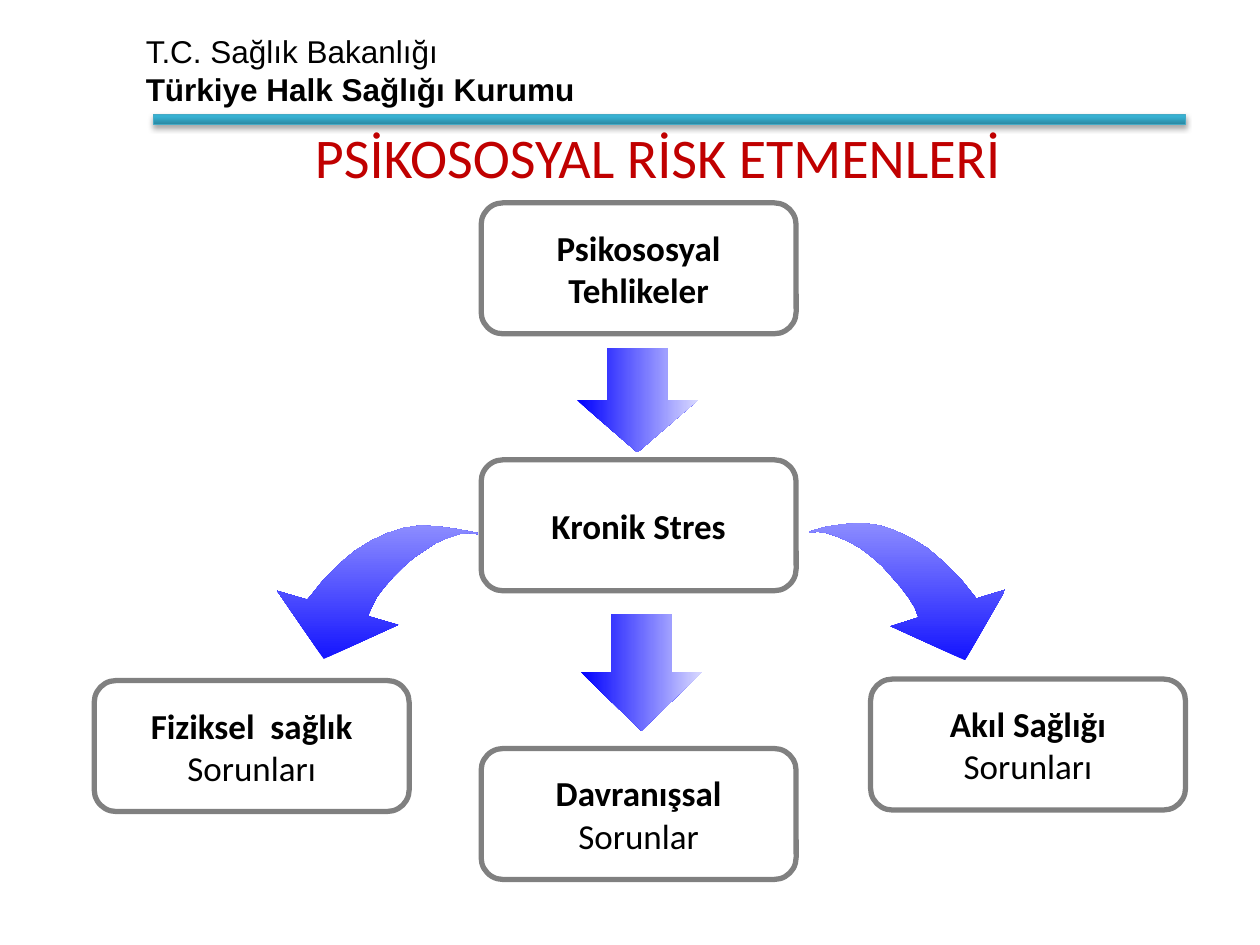
from lxml.etree import SubElement
from pptx import Presentation
from pptx.dml.color import RGBColor
from pptx.enum.shapes import MSO_SHAPE
from pptx.enum.text import MSO_ANCHOR, PP_ALIGN
from pptx.oxml.ns import qn
from pptx.util import Cm, Pt

COLORS = {
    "text": "000000", "title": "C00000", "border": "808080",
    "bar_dark": "2A88A2", "bar_light": "37B1D2", "bar_line": "46AAC5",
    "blue": "0000FF", "pale": "D8D8FF",
    "curve_dark": "1414FF", "curve_light": "8C8CFF",
}
HUNDREDTH_INCH = Cm(2.54) / 100
BOX_WIDTH, BOX_HEIGHT = 6.35, 2.64


def color(name):
    return RGBColor.from_string(COLORS[name])


class RiskSlide:
    """Holds the style and the current slide."""

    def __init__(self, slide, font="Calibri", box_size=20):
        self.shapes = slide.shapes
        self.font = font
        self.box_size = box_size

    def fill_text(self, frame, lines, size, font, ink="text", bold_lines=(),
                  align=PP_ALIGN.LEFT):
        frame.text = "\n".join(lines)
        for index, paragraph in enumerate(frame.paragraphs):
            paragraph.alignment = align
            for run in paragraph.runs:
                run.font.size = Pt(size)
                run.font.name = font
                run.font.bold = index in bold_lines
                run.font.color.rgb = color(ink)

    def text(self, place, lines, size, font=None, wrap=True, **style):
        frame = self.shapes.add_textbox(*map(Cm, place)).text_frame
        frame.word_wrap = wrap
        self.fill_text(frame, lines, size, font or self.font, **style)

    def gradient(self, shape, start, end, angle, end_position=1.0):
        shape.shadow.inherit = False
        shape.fill.gradient()
        shape.fill.gradient_angle = angle
        first, last = shape.fill.gradient_stops
        first.color.rgb, last.color.rgb = color(start), color(end)
        first.position, last.position = 0, end_position

    def bar(self, place):
        shape = self.shapes.add_shape(MSO_SHAPE.RECTANGLE, *map(Cm, place))
        self.gradient(shape, "bar_dark", "bar_light", 90, 0.8)
        shape.line.color.rgb = color("bar_line")
        shape.line.width = Pt(0.75)
        # Soft shadow straight below the bar
        effects = shape._element.spPr.find(qn("a:effectLst"))
        shadow = SubElement(effects, qn("a:outerShdw"), blurRad=str(Pt(3.1)),
                            dist=str(Pt(1.8)), dir="5400000", rotWithShape="0")
        shade = SubElement(shadow, qn("a:srgbClr"), val=COLORS["text"])
        SubElement(shade, qn("a:alpha"), val="35000")

    def box(self, left, top, lines, bold_lines=(0,)):
        shape = self.shapes.add_shape(MSO_SHAPE.ROUNDED_RECTANGLE, Cm(left), Cm(top),
                                      Cm(BOX_WIDTH), Cm(BOX_HEIGHT))
        shape.shadow.inherit = False
        shape.fill.background()
        shape.line.color.rgb = color("border")
        shape.line.width = Pt(3)
        frame = shape.text_frame
        frame.word_wrap = False
        frame.vertical_anchor = MSO_ANCHOR.MIDDLE
        self.fill_text(frame, lines, self.box_size, self.font,
                       bold_lines=bold_lines, align=PP_ALIGN.CENTER)

    def down_arrow(self, place):
        shape = self.shapes.add_shape(MSO_SHAPE.DOWN_ARROW, *map(Cm, place))
        self.gradient(shape, "blue", "pale", 0)
        shape.line.fill.background()

    def curved_arrow(self, points):
        builder = self.shapes.build_freeform(*points[0], scale=HUNDREDTH_INCH)
        builder.add_line_segments(points[1:], close=True)
        shape = builder.convert_to_shape()
        self.gradient(shape, "curve_dark", "curve_light", 90)
        shape.line.fill.background()


# Outlines in hundredths of an inch
TO_PHYSICAL = [
    (379, 423), (363, 420), (349, 418), (334, 417), (321, 419), (308, 423), (295, 429),
    (282, 437), (270, 447), (257, 460), (244, 476), (220, 469), (257, 523), (316, 496),
    (292, 489), (295, 482), (299, 474), (305, 466), (312, 458), (320, 450), (328, 443),
    (337, 437), (346, 431), (355, 427), (364, 424), (372, 423), (379, 424),
]
TO_MENTAL = [
    (642, 422), (656, 418), (670, 416), (684, 415), (698, 417), (710, 421), (723, 427),
    (736, 435), (749, 446), (762, 459), (775, 475), (798, 468), (766, 524), (707, 497),
    (729, 490), (726, 482), (721, 474), (715, 466), (708, 458), (700, 449), (692, 442),
    (683, 435), (674, 430), (665, 426), (656, 423), (649, 422), (642, 423),
]


def main():
    deck = Presentation()
    deck.slide_width, deck.slide_height = Cm(25.4), Cm(19.05)
    risk = RiskSlide(deck.slides.add_slide(deck.slide_layouts[6]))

    # Header
    risk.text((2.69, 0.53, 17.4, 1.8),
              ["T.C. Sağlık Bakanlığı", "Türkiye Halk Sağlığı Kurumu"],
              18, font="Arial", bold_lines=(1,))
    risk.bar((3.1, 2.31, 20.8, 0.2))

    # Hazards lead to chronic stress
    center = 9.7
    risk.box(center, 4.09, ["Psikososyal", "Tehlikeler"], bold_lines=(0, 1))
    risk.down_arrow((11.63, 7.01, 2.44, 2.11))
    risk.box(center, 9.27, ["Kronik Stres"])

    # Stress leads to three kinds of problems
    risk.curved_arrow(TO_PHYSICAL)
    risk.box(1.9, 13.72, ["Fiziksel  sağlık", "Sorunları"])
    risk.down_arrow((11.71, 12.37, 2.44, 2.36))
    risk.box(center, 15.09, ["Davranışsal", "Sorunlar"])
    risk.curved_arrow(TO_MENTAL)
    risk.box(17.55, 13.69, ["Akıl Sağlığı", "Sorunları"])

    # Title
    risk.text((6.1, 2.34, 14.48, 1.63), ["PSİKOSOSYAL RİSK ETMENLERİ"], 32,
              wrap=False, ink="title")

    deck.save("out.pptx")


if __name__ == "__main__":
    main()
